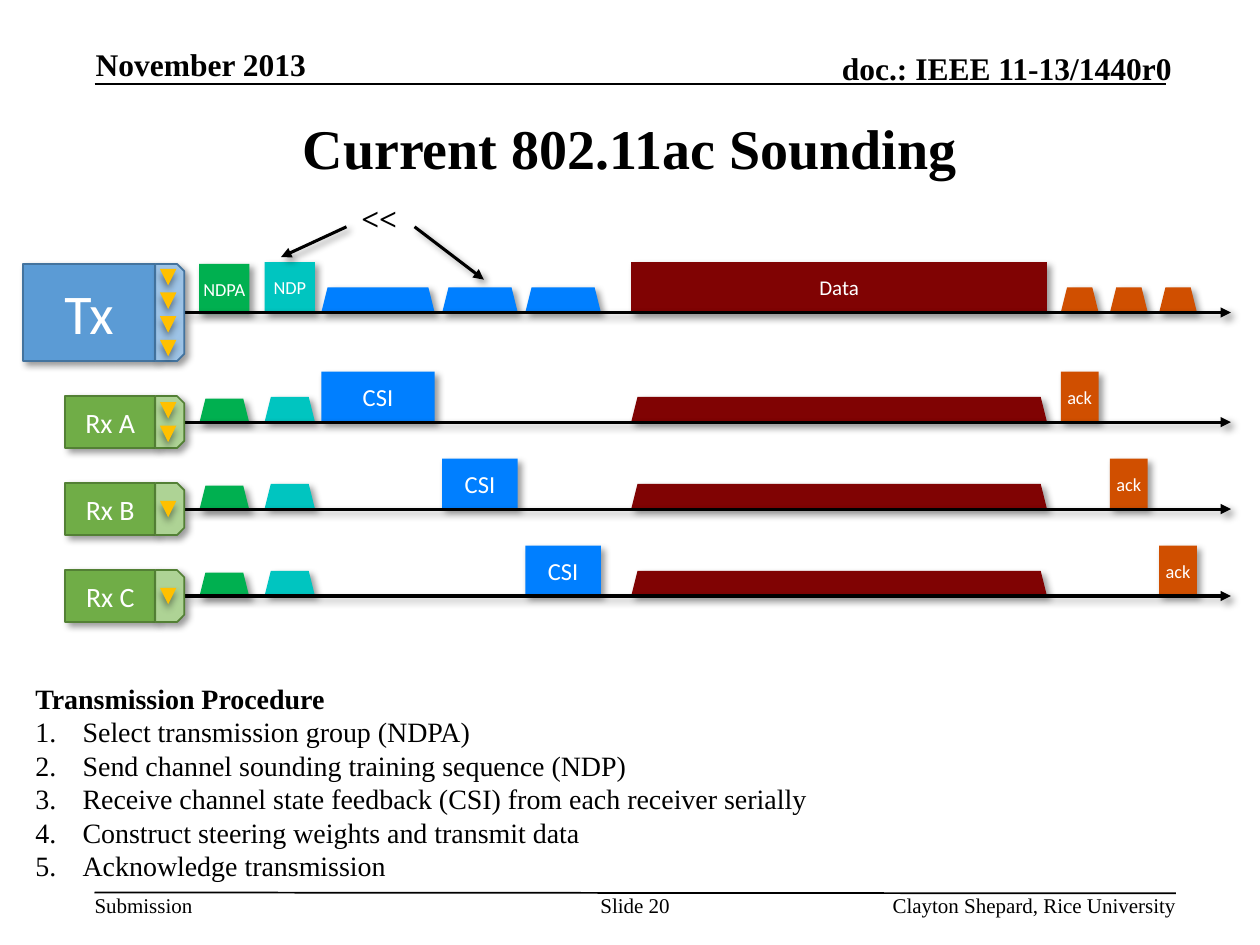
from collections import namedtuple

from lxml.etree import SubElement
from pptx import Presentation
from pptx.dml.color import RGBColor
from pptx.enum.shapes import MSO_CONNECTOR, MSO_SHAPE
from pptx.enum.text import MSO_ANCHOR, PP_ALIGN
from pptx.oxml.ns import qn
from pptx.util import Pt

BLACK = RGBColor(0x00, 0x00, 0x00)
WHITE = RGBColor(0xFF, 0xFF, 0xFF)
GREEN = RGBColor(0x00, 0xB0, 0x50)
TEAL = RGBColor(0x00, 0xC5, 0xC0)
BLUE = RGBColor(0x00, 0x7F, 0xFF)
MAROON = RGBColor(0x80, 0x03, 0x03)
ORANGE = RGBColor(0xD0, 0x4F, 0x00)
AMBER = RGBColor(0xFF, 0xC0, 0x00)
TX_COLORS = (RGBColor(0x5B, 0x9B, 0xD5), RGBColor(0x9D, 0xC3, 0xE6), RGBColor(0x43, 0x73, 0x9E))
RX_COLORS = (RGBColor(0x70, 0xAD, 0x47), RGBColor(0xAE, 0xD3, 0x95), RGBColor(0x53, 0x80, 0x35))

SERIF, SANS = "Times New Roman", "Calibri"
NO_MARGINS = dict.fromkeys(("margin_left", "margin_top", "margin_right", "margin_bottom"), 0)

Box = namedtuple("Box", "left top width height")
Frame = namedtuple("Frame", "label sender left width color size drop")
Radio = namedtuple("Radio", "label left height antennas size colors")

FRAMES = [
    Frame("NDPA", "Tx", 113.8, 28.8, GREEN, 10.5, 1),
    Frame("NDP", "Tx", 151.2, 28.8, TEAL, 10.5, 0),
    Frame("CSI", "Rx A", 183.6, 64.8, BLUE, 14, 0),
    Frame("CSI", "Rx B", 252.7, 43.2, BLUE, 14, 0),
    Frame("CSI", "Rx C", 300.2, 43.2, BLUE, 14, 0),
    Frame("Data", "Tx", 360.7, 237.6, MAROON, 12, 0),
    Frame("ack", "Rx A", 606.2, 21.6, ORANGE, 10.5, 0),
    Frame("ack", "Rx B", 634.3, 21.6, ORANGE, 10.5, 0),
    Frame("ack", "Rx C", 662.4, 21.6, ORANGE, 10.5, 0),
]
RADIOS = [
    Radio("Tx", 13, 55.5, 4, 32, TX_COLORS),
    Radio("Rx A", 37.3, 29.7, 2, 16, RX_COLORS),
    Radio("Rx B", 37.3, 29.7, 1, 16, RX_COLORS),
    Radio("Rx C", 37.3, 29.7, 1, 16, RX_COLORS),
]
STEPS = [
    "Select transmission group (NDPA)",
    "Send channel sounding training sequence (NDP)",
    "Receive channel state feedback (CSI) from each receiver serially",
    "Construct steering weights and transmit data",
    "Acknowledge transmission",
]


def apply(target, formats):
    for name, value in formats.items():
        setattr(target, name, value)


def points(box):
    return [Pt(length) for length in box]


def add_words(paragraph, words, size, font=SERIF, color=BLACK, bold=False):
    run = paragraph.add_run()
    run.text = words
    apply(run.font, {"size": Pt(size), "name": font, "bold": bold})
    run.font.color.rgb = color


def add_label(slide, box, words, size, align=PP_ALIGN.LEFT, bold=False, **frame_formats):
    frame = slide.shapes.add_textbox(*points(box)).text_frame
    apply(frame, {"word_wrap": True, **frame_formats})
    frame.paragraphs[0].alignment = align
    add_words(frame.paragraphs[0], words, size, bold=bold)


def add_shadow(part, angle=45):
    effects = SubElement(part._element.spPr, qn("a:effectLst"))
    shadow = SubElement(effects, qn("a:outerShdw"), blurRad=str(Pt(4)), dist=str(Pt(3)),
                        dir=str(angle * 60000), algn="tl", rotWithShape="0")
    color = SubElement(shadow, qn("a:srgbClr"), val=str(BLACK))
    SubElement(color, qn("a:alpha"), val="40000")


def add_solid(shapes, kind, box, fill, outline=None, angle=45):
    solid = shapes.add_shape(kind, *points(box))
    solid.fill.solid()
    solid.fill.fore_color.rgb = fill
    if outline is None:
        solid.line.fill.background()
    else:
        solid.line.color.rgb = outline
        solid.line.width = Pt(1)
    add_shadow(solid, angle)
    return solid


def write_inside(solid, words, size, **frame_formats):
    apply(solid.text_frame, {"vertical_anchor": MSO_ANCHOR.MIDDLE, **frame_formats})
    paragraph = solid.text_frame.paragraphs[0]
    paragraph.alignment = PP_ALIGN.CENTER
    add_words(paragraph, words, size, SANS, WHITE)


def add_line(slide, start, end, width):
    line = slide.shapes.add_connector(MSO_CONNECTOR.STRAIGHT, *points(start + end))
    line.line.color.rgb = BLACK
    line.line.width = Pt(width)
    return line


def add_rule(slide, start, end):
    SubElement(add_line(slide, start, end, 1)._element.spPr, qn("a:effectLst"))


def add_arrow(slide, start, end):
    arrow = add_line(slide, start, end, 1.75)
    SubElement(arrow.line._get_or_add_ln(), qn("a:tailEnd"), type="triangle")
    add_shadow(arrow)


def add_header(slide, box):
    bottom = box.top + box.height
    add_rule(slide, (box.left, bottom), (box.left + box.width, bottom))
    style = {"bold": True, "vertical_anchor": MSO_ANCHOR.BOTTOM, **NO_MARGINS}
    add_label(slide, Box(box.left + 0.7, box.top, 147.6, 21.6), "November 2013", 18, **style)
    add_label(slide, Box(393.8, box.top + 2.1, 275.8, 21.6), "doc.: IEEE 11-13/1440r0", 18,
              PP_ALIGN.RIGHT, **style)


def add_footer(slide, box):
    right = box.left + box.width
    add_rule(slide, (box.left, box.top), (right, box.top + 0.5))
    add_label(slide, Box(box.left, box.top, 56.2, box.height), "Submission", 12,
              **{**NO_MARGINS, "word_wrap": False})
    add_label(slide, Box(342, box.top, 41.8, 28.8), "Slide 20", 12, PP_ALIGN.CENTER, **NO_MARGINS)
    add_label(slide, Box(right - 250.3, box.top, 250.3, box.height),
              "Clayton Shepard, Rice University", 12, PP_ALIGN.RIGHT, **NO_MARGINS)


def add_title(slide, box):
    title = slide.shapes.title
    apply(title, dict(zip(box._fields, points(box))))
    apply(title.text_frame, {"vertical_anchor": MSO_ANCHOR.MIDDLE, "word_wrap": True})
    title.text_frame.paragraphs[0].alignment = PP_ALIGN.CENTER
    add_words(title.text_frame.paragraphs[0], "Current 802.11ac Sounding", 32, bold=True)


def add_frame(slide, frame, radio, axis):
    bottom = axis + frame.drop
    # The sender shows the full frame; the other end shows a low trapezoid
    if radio == frame.sender:
        block = add_solid(slide.shapes, MSO_SHAPE.RECTANGLE,
                          Box(frame.left, bottom - 28.8, frame.width, 28.8), frame.color)
        write_inside(block, frame.label, frame.size, **NO_MARGINS)
    elif "Tx" in (radio, frame.sender):
        add_solid(slide.shapes, MSO_SHAPE.TRAPEZOID,
                  Box(frame.left, bottom - 14.4, frame.width, 14.4), frame.color)


def add_radio(slide, radio, axis):
    shapes = slide.shapes.add_group_shape().shapes
    body_color, port_color, outline = radio.colors
    edge, port_width, antenna, gap = 88.7, 16.6, 9.4, 13.5
    body = add_solid(shapes, MSO_SHAPE.RECTANGLE,
                     Box(radio.left, axis - radio.height / 2, edge - radio.left, radio.height),
                     body_color, outline)
    write_inside(body, radio.label, radio.size)

    # Port is drawn lying down, then turned upright
    middle = edge + port_width / 2
    port = add_solid(shapes, MSO_SHAPE.SNIP_2_SAME_RECTANGLE,
                     Box(middle - radio.height / 2, axis - port_width / 2, radio.height, port_width),
                     port_color, outline)
    port.rotation = 90
    port.adjustments[0], port.adjustments[1] = 0.25, 0.02

    first = axis - antenna / 2 - gap * (radio.antennas - 1) / 2
    for number in range(radio.antennas):
        triangle = add_solid(shapes, MSO_SHAPE.ISOSCELES_TRIANGLE,
                             Box(91.4, first + number * gap, antenna, antenna), AMBER, angle=90)
        triangle.rotation = 180


def add_timelines(slide, box):
    tx_axis = box.top + 28.8
    axes = [tx_axis] + [tx_axis + 62.6 + 49.7 * row for row in range(3)]
    for radio, axis in zip(RADIOS, axes):
        for frame in FRAMES:
            add_frame(slide, frame, radio.label, axis)
        add_arrow(slide, (105.8, axis), (box.left + box.width, axis))
        add_radio(slide, radio, axis)


def add_comparison(slide, box):
    add_label(slide, box, "<<", 18, bold=True)
    add_arrow(slide, (box.left - 1.4, 129.6), (160.6, 146.9))
    add_arrow(slide, (box.left + 37.5, 129.6), (276.5, 159.8))


def add_procedure(slide, box):
    text = slide.shapes.add_textbox(*points(box)).text_frame
    apply(text, {"word_wrap": True, **NO_MARGINS})
    heading = text.paragraphs[0]
    heading.line_spacing = Pt(29)
    add_words(heading, "Transmission Procedure", 16, bold=True)
    for step in STEPS:
        paragraph = text.add_paragraph()
        properties = paragraph._p.get_or_add_pPr()
        properties.set("marL", str(Pt(27)))
        properties.set("indent", str(-Pt(27)))
        SubElement(properties, qn("a:buFont"), typeface="+mj-lt")
        SubElement(properties, qn("a:buAutoNum"), type="arabicPeriod")
        paragraph.line_spacing = Pt(19.2)
        add_words(paragraph, step, 16)


def main():
    deck = Presentation()
    apply(deck, {"slide_width": Pt(720), "slide_height": Pt(540)})
    slide = deck.slides.add_slide(deck.slide_layouts[5])
    add_header(slide, Box(54, 26, 612, 22.2))
    add_footer(slide, Box(54, 510, 618, 14.4))
    add_title(slide, Box(54, 42.5, 612, 83.5))
    add_timelines(slide, Box(13, 149.8, 690.4, 205))
    add_procedure(slide, Box(20.2, 379.4, 679.7, 126))
    add_comparison(slide, Box(199.4, 110.2, 47.5, 28.8))
    deck.save("out.pptx")


if __name__ == "__main__":
    main()
